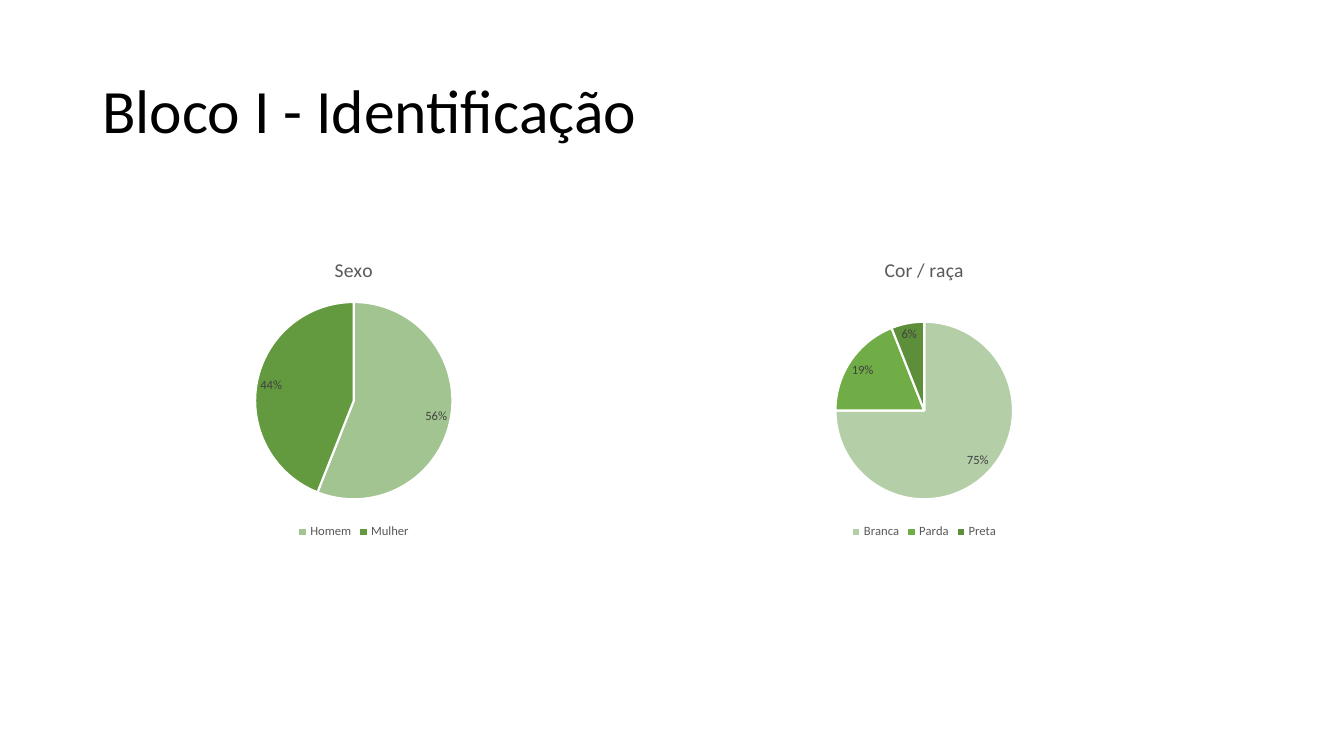
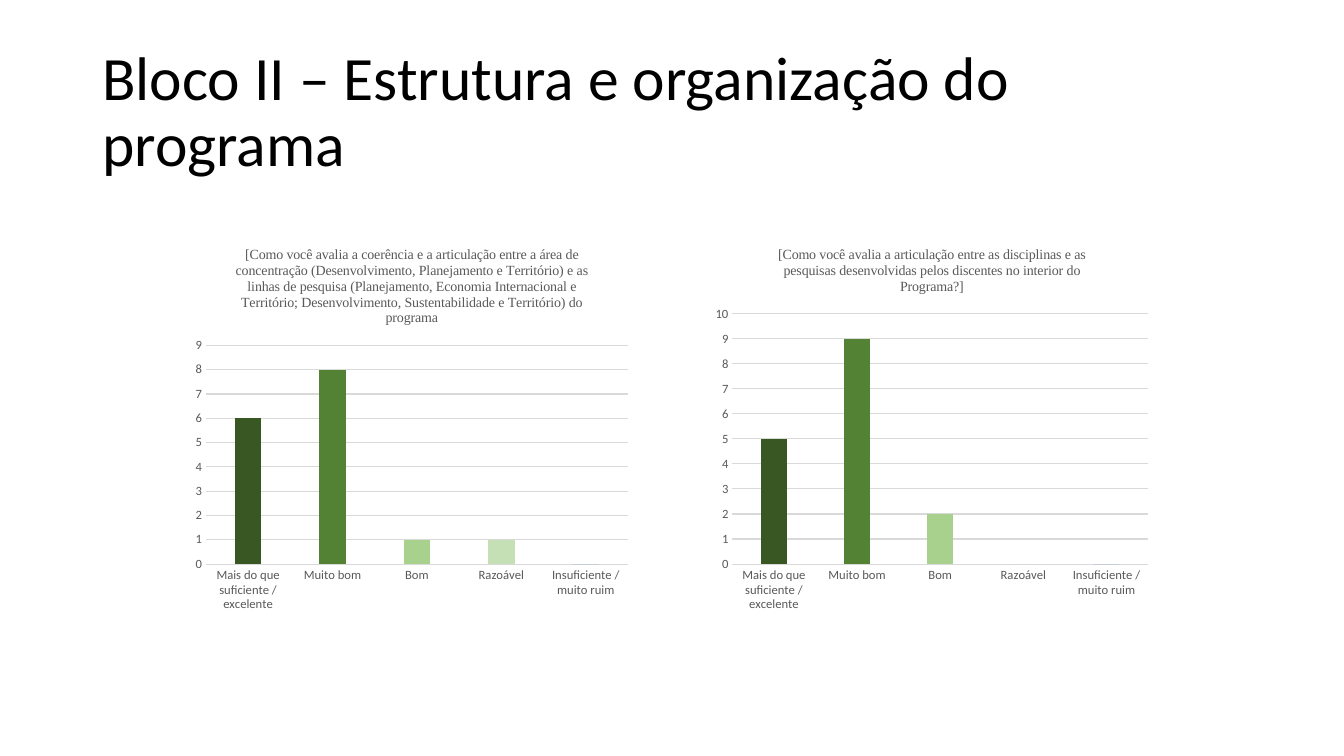
from pptx import Presentation
from pptx.chart.data import CategoryChartData
from pptx.dml.color import RGBColor
from pptx.enum.chart import (XL_CHART_TYPE, XL_LABEL_POSITION, XL_LEGEND_POSITION,
                             XL_TICK_MARK)
from pptx.enum.text import MSO_ANCHOR
from pptx.util import Pt

BLACK = RGBColor(0x00, 0x00, 0x00)
WHITE = RGBColor(0xFF, 0xFF, 0xFF)
DARK_GRAY = RGBColor(0x40, 0x40, 0x40)
GRAY = RGBColor(0x59, 0x59, 0x59)
GRID_GRAY = RGBColor(0xD9, 0xD9, 0xD9)
RATING_GREENS = [RGBColor(0x38, 0x57, 0x23), RGBColor(0x54, 0x82, 0x35),
                 RGBColor(0xA9, 0xD1, 0x8E), RGBColor(0xC5, 0xE0, 0xB4)]

TITLE_FONT = {"name": "Calibri", "size": Pt(44), "color": BLACK}
CHART_FONT = {"name": "Calibri", "size": Pt(10), "color": BLACK}
PIE_TITLE_FONT = {"name": "Calibri", "size": Pt(14), "color": GRAY, "bold": False}
QUESTION_FONT = {"name": "Times New Roman", "size": Pt(10), "color": GRAY, "bold": False}
SMALL_FONT = {"name": "Calibri", "size": Pt(9), "color": GRAY}
LABEL_FONT = {**SMALL_FONT, "color": DARK_GRAY}

RATINGS = ["Mais do que suficiente / excelente", "Muito bom", "Bom", "Razoável",
           "Insuficiente / muito ruim"]

IDENTIFICATION = {
    "title": "Bloco I - Identificação",
    "pies": [
        {"title": "Sexo", "left": 72.7,
         "shares": {"Homem": 56, "Mulher": 44},
         "colors": [RGBColor(0xA1, 0xC4, 0x90), RGBColor(0x63, 0x9A, 0x3F)]},
        {"title": "Cor / raça", "left": 480.2,
         "shares": {"Branca": 75, "Parda": 19, "Preta": 6},
         "colors": [RGBColor(0xB4, 0xCF, 0xA8), RGBColor(0x70, 0xAD, 0x47),
                    RGBColor(0x5D, 0x8F, 0x3B)]},
    ],
}
STRUCTURE = {
    "title": "Bloco II – Estrutura e organização do programa",
    "questions": [
        {"title": "[Como você avalia a coerência e a articulação entre a área de concentração "
                  "(Desenvolvimento, Planejamento e Território) e as linhas de pesquisa "
                  "(Planejamento, Economia Internacional e Território; Desenvolvimento, "
                  "Sustentabilidade e Território) do programa",
         "left": 133.2, "answers": [6, 8, 1, 1, 0]},
        {"title": "[Como você avalia a articulação entre as disciplinas e as pesquisas "
                  "desenvolvidas pelos discentes no interior do Programa?]",
         "left": 504.7, "answers": [5, 9, 2, 0, 0]},
    ],
}


def style_font(font, values):
    for name, value in values.items():
        if name == "color":
            font.color.rgb = value
        else:
            setattr(font, name, value)


def add_titled_slide(deck, title):
    slide = deck.slides.add_slide(deck.slide_layouts[6])
    frame = slide.shapes.add_textbox(Pt(66), Pt(28.75), Pt(828), Pt(104.4)).text_frame
    frame.word_wrap = True
    frame.vertical_anchor = MSO_ANCHOR.MIDDLE
    paragraph = frame.paragraphs[0]
    paragraph.line_spacing = 0.9
    heading = paragraph.add_run()
    heading.text = title
    style_font(heading.font, TITLE_FONT)
    return slide


def add_titled_chart(slide, kind, box, title, title_font, categories, values, colors):
    """Add a one-series chart whose points take the colours in order."""
    data = CategoryChartData()
    data.categories = categories
    data.add_series(title, values)
    chart = slide.shapes.add_chart(kind, *map(Pt, box), data).chart
    style_font(chart.font, CHART_FONT)
    chart.has_title = True
    chart.chart_title.include_in_layout = False
    paragraph = chart.chart_title.text_frame.paragraphs[0]
    heading = paragraph.add_run()
    heading.text = title
    style_font(heading.font, title_font)
    for index, color in enumerate(colors):
        fill = chart.plots[0].series[0].points[index].format.fill
        fill.solid()
        fill.fore_color.rgb = color
    return chart


def add_pie(slide, pie):
    shares = pie["shares"]
    chart = add_titled_chart(slide, XL_CHART_TYPE.PIE, (pie["left"], 172, 360, 216),
                             pie["title"], PIE_TITLE_FONT,
                             list(shares), list(shares.values()), pie["colors"])
    chart.has_legend = True
    chart.legend.position = XL_LEGEND_POSITION.BOTTOM
    chart.legend.include_in_layout = False
    style_font(chart.legend.font, SMALL_FONT)

    plot = chart.plots[0]
    plot.vary_by_categories = True
    for index in range(len(shares)):
        border = plot.series[0].points[index].format.line
        border.color.rgb = WHITE
        border.width = Pt(1.5)
    labels = plot.series[0].data_labels
    label_format = {"show_percentage": True, "show_value": False,
                    "number_format": "0%", "number_format_is_linked": False,
                    "position": XL_LABEL_POSITION.BEST_FIT}
    for name, value in label_format.items():
        setattr(labels, name, value)
    style_font(labels.font, LABEL_FONT)


def add_question(slide, question):
    chart = add_titled_chart(slide, XL_CHART_TYPE.COLUMN_CLUSTERED,
                             (question["left"], 164.2, 321.8, 278.6),
                             question["title"], QUESTION_FONT,
                             RATINGS, question["answers"], RATING_GREENS)
    chart.has_legend = False
    plot = chart.plots[0]
    for name, value in {"vary_by_categories": False, "gap_width": 219, "overlap": -27}.items():
        setattr(plot, name, value)

    ratings, counts = chart.category_axis, chart.value_axis
    for axis in (ratings, counts):
        axis.major_tick_mark = axis.minor_tick_mark = XL_TICK_MARK.NONE
        style_font(axis.tick_labels.font, SMALL_FONT)
    counts.has_major_gridlines = True
    counts.format.line.fill.background()
    for line in (ratings.format.line, counts.major_gridlines.format.line):
        line.color.rgb = GRID_GRAY
        line.width = Pt(0.75)


def main():
    deck = Presentation()
    deck.slide_width, deck.slide_height = Pt(960), Pt(540)

    identification = add_titled_slide(deck, IDENTIFICATION["title"])
    for pie in IDENTIFICATION["pies"]:
        add_pie(identification, pie)

    structure = add_titled_slide(deck, STRUCTURE["title"])
    for question in STRUCTURE["questions"]:
        add_question(structure, question)

    deck.save("out.pptx")


if __name__ == "__main__":
    main()
